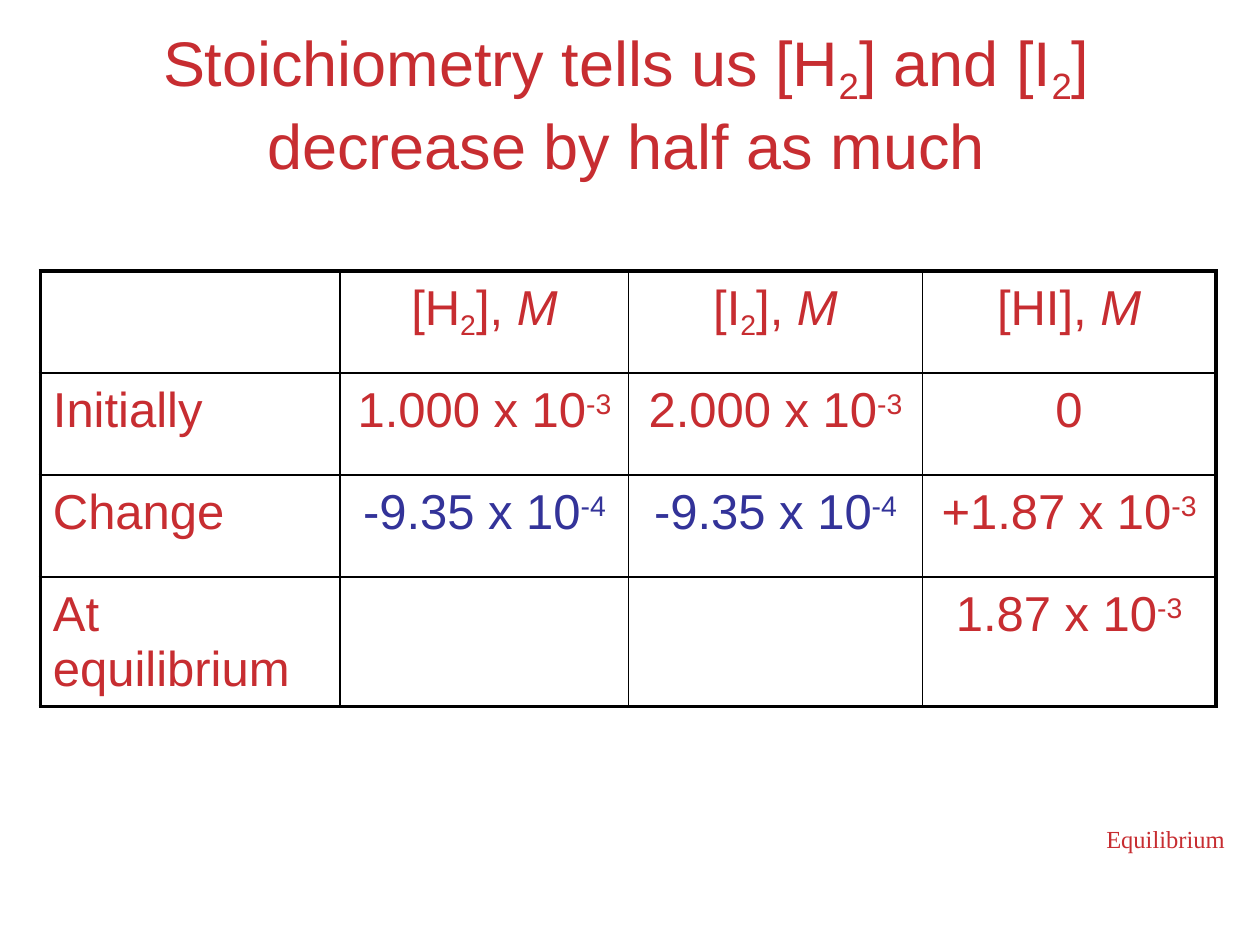
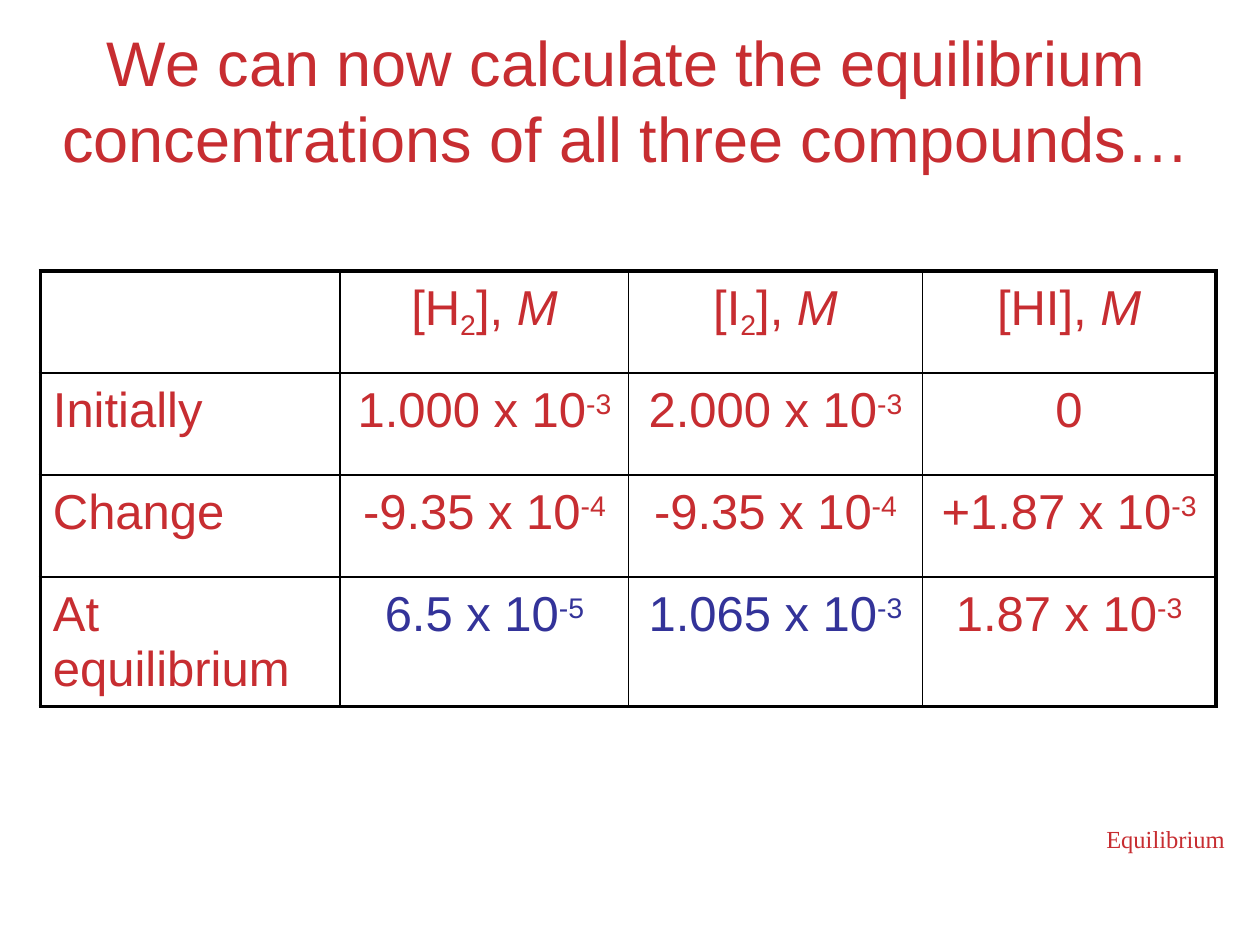
import pptx
import pptx.dml.color
import pptx.enum.text
import pptx.oxml
import pptx.oxml.ns
import pptx.util

Inches = pptx.util.Inches
Pt = pptx.util.Pt
Align = pptx.enum.text.PP_ALIGN

RED = pptx.dml.color.RGBColor(0xC7, 0x2D, 0x31)
BLUE = pptx.dml.color.RGBColor(0x33, 0x33, 0x99)
BLACK = pptx.dml.color.RGBColor(0, 0, 0)

COLUMN_WIDTHS = [2.38, 2.29, 2.33, 2.33]
ROW_HEIGHTS = [0.81, 0.81, 0.81, 1.03]
INNER_LINE, OUTER_LINE = 1, 2.25
BASELINES = {"_": "-20000", "^": "26000"}

HEADER = ["", "[H|_2|], |/M", "[I|_2|], |/M", "[HI], |/M"]
INITIALLY = ["Initially", "1.000 x 10|^-3", "2.000 x 10|^-3", "0"]
CHANGE = ["Change", "-9.35 x 10|^-4", "-9.35 x 10|^-4", "+1.87 x 10|^-3"]
EQUILIBRIUM_HI = "1.87 x 10|^-3"


def write_text(paragraph, markup, size, color=RED, name="Arial", alignment=Align.CENTER):
    """Write runs parted by |, where _ lowers, ^ raises and / slants a run."""
    paragraph.alignment = alignment
    font = paragraph.font
    font.name, font.size, font.color.rgb = name, Pt(size), color
    for part in markup.split("|"):
        marked = part[:1] in ("_", "^", "/")
        run = paragraph.add_run()
        run.text = part[1:] if marked else part
        if part[:1] == "/":
            run.font.italic = True
        elif marked:
            run._r.get_or_add_rPr().set("baseline", BASELINES[part[0]])


def add_text_box(slide, left, top, width, height, inset_top=0):
    """Add a wrapping text box and return its first paragraph."""
    box = slide.shapes.add_textbox(Inches(left), Inches(top), Inches(width), Inches(height))
    frame = box.text_frame
    frame.word_wrap = True
    frame.margin_left = frame.margin_right = frame.margin_bottom = 0
    frame.margin_top = Inches(inset_top)
    return frame.paragraphs[0]


def add_title(slide, markup):
    """Add the centred slide title."""
    write_text(add_text_box(slide, 0.36, 0.03, 9.22, 1.49, 0.16), markup, 36)


def add_footer(slide):
    """Add the chapter name at the lower right."""
    paragraph = add_text_box(slide, 8.78, 6.55, 0.95, 0.24)
    paragraph.line_spacing = Pt(16.2)
    write_text(paragraph, "Equilibrium", 14, name="Times New Roman", alignment=Align.LEFT)


def set_borders(cell, row, column):
    """Draw thick lines on the table's rim and thin lines inside it."""
    on_rim = {
        "lnL": column == 0,
        "lnR": column == len(COLUMN_WIDTHS) - 1,
        "lnT": row == 0,
        "lnB": row == len(ROW_HEIGHTS) - 1,
    }
    properties = cell._tc.get_or_add_tcPr()
    for side, is_rim in on_rim.items():
        width = Pt(OUTER_LINE if is_rim else INNER_LINE)
        properties.append(pptx.oxml.parse_xml(
            f'<a:{side} {pptx.oxml.ns.nsdecls("a")} w="{width}"><a:solidFill>'
            f'<a:srgbClr val="{BLACK}"/></a:solidFill></a:{side}>'))


def fill_cell(cell, row, column, markup, color):
    """Format one cell and write its text."""
    cell.margin_left = Inches(0.1 if column == 0 else 0)
    cell.margin_right = cell.margin_bottom = 0
    cell.margin_top = Inches(0.08)
    set_borders(cell, row, column)
    cell.fill.background()
    if markup:
        alignment = Align.LEFT if column == 0 else Align.CENTER
        write_text(cell.text_frame.paragraphs[0], markup, 28, color, alignment=alignment)


def add_concentration_table(slide, equilibrium, new_row):
    """Add the table, with the newly found H2 and I2 values of new_row in blue."""
    rows = [HEADER, INITIALLY, CHANGE, ["At equilibrium", *equilibrium, EQUILIBRIUM_HI]]
    table = slide.shapes.add_table(
        len(rows), len(HEADER), Inches(0.32), Inches(2.15),
        Inches(sum(COLUMN_WIDTHS)), Inches(sum(ROW_HEIGHTS))).table
    table.first_row = table.horz_banding = False
    for column, width in zip(table.columns, COLUMN_WIDTHS):
        column.width = Inches(width)
    for row, height in zip(table.rows, ROW_HEIGHTS):
        row.height = Inches(height)
    for row, values in enumerate(rows):
        for column, markup in enumerate(values):
            color = BLUE if row == new_row and column in (1, 2) else RED
            fill_cell(table.cell(row, column), row, column, markup, color)


def add_slide(presentation, title, equilibrium, new_row):
    """Add one slide with title, footer and concentration table."""
    slide = presentation.slides.add_slide(presentation.slide_layouts[6])
    add_title(slide, title)
    add_footer(slide)
    add_concentration_table(slide, equilibrium, new_row)


def main():
    """Build and save both slides."""
    presentation = pptx.Presentation()
    presentation.slide_width, presentation.slide_height = Inches(10), Inches(7.5)
    add_slide(presentation,
              "Stoichiometry tells us [H|_2|] and [I|_2|] decrease by half as much",
              ["", ""], new_row=2)
    add_slide(presentation,
              "We can now calculate the equilibrium concentrations of all three compounds…",
              ["6.5 x 10|^-5", "1.065 x 10|^-3"], new_row=3)
    presentation.save("out.pptx")


if __name__ == "__main__":
    main()
